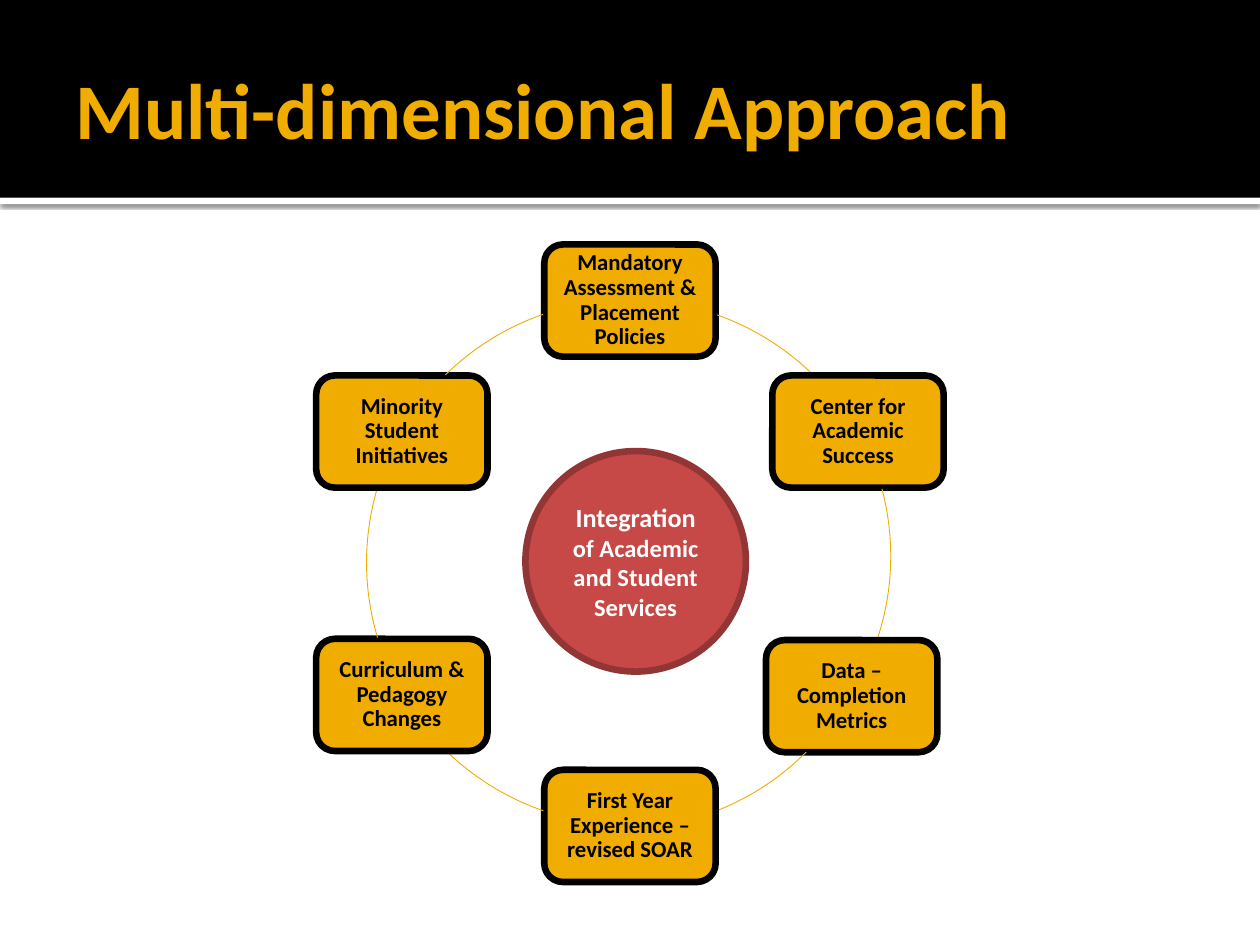
from lxml import etree
from pptx import Presentation
from pptx.dml.color import RGBColor
from pptx.enum.shapes import MSO_SHAPE
from pptx.enum.text import MSO_ANCHOR, PP_ALIGN
from pptx.oxml import parse_xml
from pptx.util import Inches, Pt

RECT, ROUND = MSO_SHAPE.RECTANGLE, MSO_SHAPE.ROUNDED_RECTANGLE
OVAL, ARC = MSO_SHAPE.OVAL, MSO_SHAPE.ARC
MIDDLE, CENTER = MSO_ANCHOR.MIDDLE, PP_ALIGN.CENTER

GOLD = RGBColor(0xF0, 0xAD, 0x00)
BLACK = RGBColor(0x00, 0x00, 0x00)
WHITE = RGBColor(0xFF, 0xFF, 0xFF)
RED = RGBColor(0xC6, 0x48, 0x47)
MAROON = RGBColor(0x92, 0x35, 0x35)

FONT = "Calibri"
BORDER = 3.78
NODE_W, NODE_H = 1.36, 0.89
RING = 4.17
DRAWING = "http://schemas.openxmlformats.org/drawingml/2006/main"

# Label, left, top of each node, clockwise from the top
NODES = [
    ("Mandatory Assessment & Placement Policies", 4.32, 1.94),
    ("Center for Academic Success", 6.13, 2.98),
    ("Data – Completion Metrics", 6.08, 5.08),
    ("First Year Experience – revised SOAR", 4.32, 6.11),
    ("Curriculum & Pedagogy Changes", 2.51, 5.07),
    ("Minority Student Initiatives", 2.51, 2.98),
]
# Left and top of the ring, then start and end angle in degrees
ARCS = [
    (2.91, 2.38, 289.5, 314.6),
    (2.9, 2.33, 345.1, 18.3),
    (2.84, 2.41, 45, 68.5),
    (2.91, 2.38, 109.1, 134.2),
    (2.91, 2.38, 163.4, 196.3),
    (2.91, 2.38, 225.6, 250.8),
]


def add_shape(slide, kind, box, fill=None, line=None, width=BORDER):
    shape = slide.shapes.add_shape(kind, *map(Inches, box))
    shape.shadow.inherit = False
    if fill is None:
        shape.fill.background()
    else:
        shape.fill.solid()
        shape.fill.fore_color.rgb = fill
    if line is None:
        shape.line.fill.background()
    else:
        shape.line.color.rgb = line
        shape.line.width = Pt(width)
    return shape


def set_text(shape, runs, color, inset=None, align=None):
    """Fill a shape with one bold paragraph of (text, size) runs."""
    frame = shape.text_frame
    frame.word_wrap = True
    frame.vertical_anchor = MIDDLE
    if inset is not None:
        frame.margin_left = frame.margin_right = Inches(inset)
        frame.margin_top = frame.margin_bottom = Inches(inset)
    para = frame.paragraphs[0]
    para.alignment = align
    for text, size in runs:
        run = para.add_run()
        run.text = text
        run.font.name = FONT
        run.font.size = Pt(size)
        run.font.bold = True
        run.font.color.rgb = color
    return para


def add_shadow(shape):
    effects = shape._element.spPr.find(f"{{{DRAWING}}}effectLst")
    effects.append(parse_xml(
        f'<a:outerShdw xmlns:a="{DRAWING}" blurRad="{Pt(2.5)}" '
        f'dist="{Pt(0.8)}" dir="5400000" algn="t" rotWithShape="0">'
        '<a:srgbClr val="000000"><a:alpha val="60000"/></a:srgbClr>'
        '</a:outerShdw>'))


def add_header(slide):
    rule = add_shape(slide, RECT, (0, 1.57, 10, 0.05), WHITE)
    add_shadow(rule)
    add_shape(slide, RECT, (0, 0, 10, 1.57), BLACK)
    title = slide.shapes.add_textbox(*map(Inches, (0.5, 0.17, 9, 1.37)))
    set_text(title, [("Multi-dimensional Approach", 45)], GOLD, 0.05)
    title.text_frame.margin_left = Inches(0.1)


def add_node(slide, label, left, top):
    node = add_shape(slide, ROUND, (left, top, NODE_W, NODE_H), GOLD, BLACK)
    para = set_text(node, [(label, 13)], BLACK, 0.05, CENTER)
    para.line_spacing = 0.9


def add_arc(slide, left, top, start, end):
    arc = add_shape(slide, ARC, (left, top, RING, RING), None, GOLD, 0.5)
    # Angles are stored in 60000ths of a degree, adjustments in 100000ths
    for i, angle in enumerate((start, end)):
        arc.adjustments[i] = angle * 0.6


def add_hub(slide):
    hub = add_shape(slide, OVAL, (4.17, 3.58, 1.75, 1.75), RED, MAROON)
    runs = [("Integration ", 15), ("of Academic and Student Services", 14)]
    set_text(hub, runs, WHITE, align=CENTER)


def main():
    deck = Presentation()
    deck.slide_width, deck.slide_height = Inches(10), Inches(7.5)
    slide = deck.slides.add_slide(deck.slide_layouts[6])

    # Title band
    add_header(slide)

    # Cycle of nodes, each followed by the arc to the next
    for node, arc in zip(NODES, ARCS):
        add_node(slide, *node)
        add_arc(slide, *arc)

    # Centre
    add_hub(slide)
    deck.save("out.pptx")


if __name__ == "__main__":
    main()
